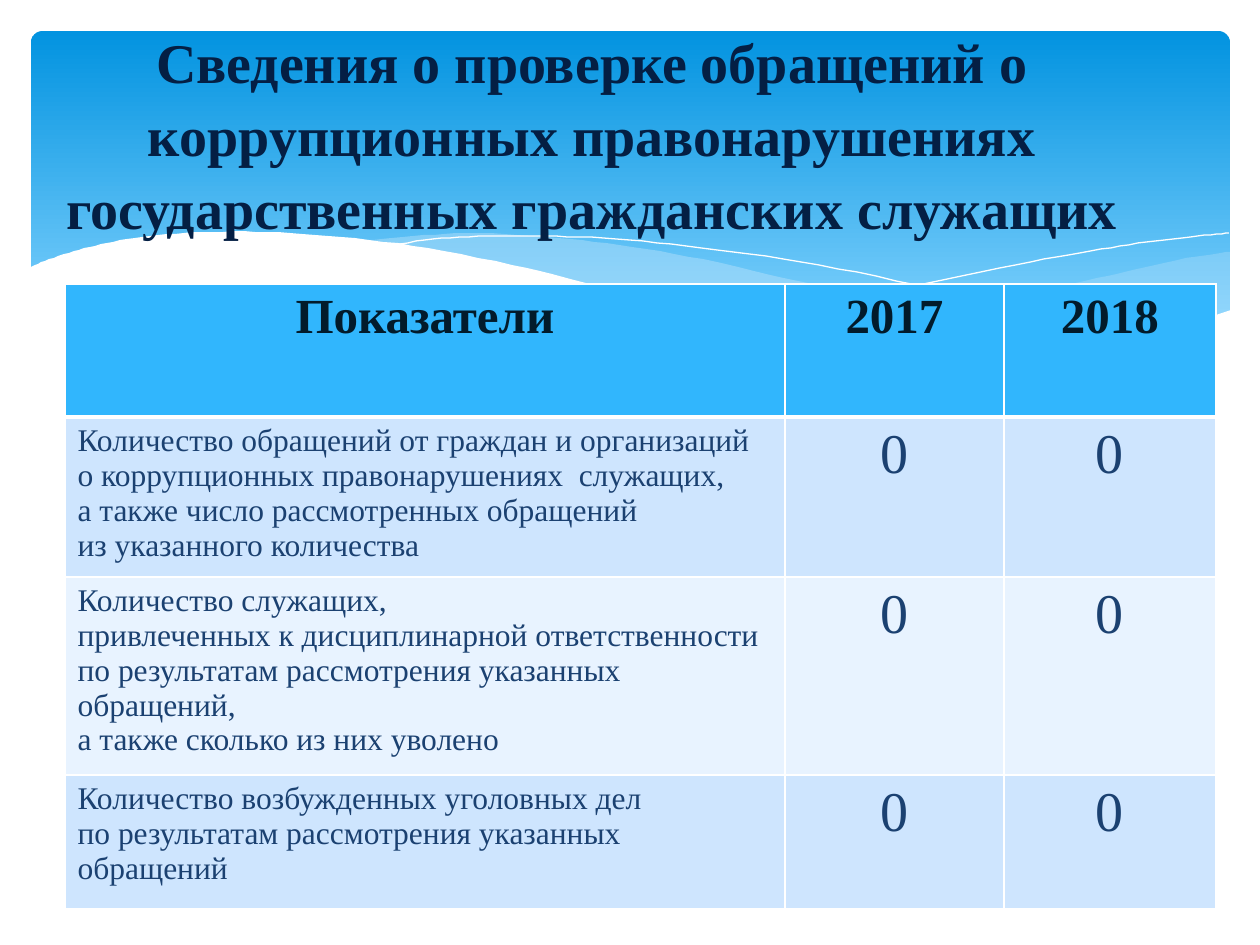
from dataclasses import dataclass
from lxml.etree import SubElement
from pptx import Presentation
from pptx.dml.color import RGBColor
from pptx.enum.shapes import MSO_SHAPE
from pptx.enum.text import MSO_ANCHOR, MSO_AUTO_SIZE, PP_ALIGN
from pptx.oxml.ns import qn
from pptx.util import Emu, Pt


@dataclass(frozen=True)
class Theme:
    font: str = "Times New Roman"
    title: str = "041F44"
    head: str = "021B2B"
    body: str = "1B4171"
    white: str = "FFFFFF"
    wave: str = "C6E7FC"
    sky: tuple = ("0293E0", "83D3FE")
    header: str = "31B6FD"
    bands: tuple = ("CEE5FE", "E8F3FF")
    big: int = 32
    mid: int = 28
    small: int = 18


theme = Theme()
PX = 7257  # EMU in one px, 126 px to the inch
STEPS = 6


def smooth(knots):
    """Return points on a Catmull-Rom curve through the knots."""
    ends = [knots[0], *knots, knots[-1]]
    points = [knots[0]]
    for a, b, c, d in zip(ends, ends[1:], ends[2:], ends[3:]):
        for step in range(1, STEPS + 1):
            t = step / STEPS
            points.append(tuple(
                (2 * q + (r - p) * t + (2 * p - 5 * q + 4 * r - s) * t ** 2
                 + (3 * q - p - 3 * r + s) * t ** 3) / 2
                for p, q, r, s in zip(a, b, c, d)))
    return points


def write(para, text, size, color, bold=False):
    run = para.add_run()
    run.text = text
    run.font.name = theme.font
    run.font.size = Pt(size)
    run.font.bold = bold
    run.font.color.rgb = RGBColor.from_string(color)


deck = Presentation()
deck.slide_width, deck.slide_height = Emu(1260 * PX), Emu(945 * PX)
slide = deck.slides.add_slide(deck.slide_layouts[5])
shapes = slide.shapes

# Blue panel
panel = shapes.add_shape(MSO_SHAPE.ROUNDED_RECTANGLE,
                         *(Emu(n * PX) for n in (31, 31, 1199, 340)))
panel.adjustments[0] = 0.034
panel.shadow.inherit = False
panel.line.fill.background()
panel.fill.gradient()
panel.fill.gradient_angle = 270
for stop, color, place in zip(panel.fill.gradient_stops, theme.sky, (0, 0.9)):
    stop.color.rgb = RGBColor.from_string(color)
    stop.position = place

# Waves: smooth curves, straight corners, fill, opacity in percent
waves = [
    ([[(1230, 252), (1194, 257), (1142, 268), (1085, 281), (982, 305), (833, 334)],
      [(833, 334), (923, 345), (1026, 350), (1120, 343), (1178, 332), (1230, 311)]],
     [], theme.wave, 29),
    ([[(1125, 344), (1019, 328), (890, 302), (793, 280), (717, 262), (632, 247),
       (557, 238), (479, 233), (413, 236), (360, 241)],
      [(360, 241), (431, 251), (509, 266), (566, 280), (668, 302), (757, 321),
       (838, 335), (921, 345), (1017, 350), (1125, 344)]],
     [], theme.wave, 40),
    ([[(389, 246), (433, 239), (488, 236), (545, 236), (616, 239), (701, 248),
       (801, 262), (916, 285), (1047, 316), (1143, 343)]], [], None, 100),
    ([[(772, 324), (823, 310), (907, 288), (1016, 265), (1091, 251), (1147, 242),
       (1198, 236), (1229, 233)]], [], None, 100),
    ([[(1231, 310), (1172, 330), (1103, 344), (1020, 349), (915, 343), (816, 330),
       (699, 309), (599, 286), (527, 268), (428, 248), (341, 237), (266, 232),
       (203, 232), (150, 236), (107, 243), (74, 251), (45, 261), (29, 268)]],
     [(29, 415), (1231, 415)], theme.white, 100),
]
for curves, corners, color, alpha in waves:
    points = [point for curve in curves for point in smooth(curve)] + corners
    path = shapes.build_freeform(*points[0], scale=PX)
    path.add_line_segments(points[1:], close=color is not None)
    wave = path.convert_to_shape()
    wave.shadow.inherit = False
    if color is None:
        wave.fill.background()
        wave.line.color.rgb = RGBColor.from_string(theme.white)
        wave.line.width = Pt(0)
        continue
    wave.line.fill.background()
    wave.fill.solid()
    wave.fill.fore_color.rgb = RGBColor.from_string(color)
    if alpha < 100:
        tint = wave.element.spPr.find(qn("a:solidFill"))[0]
        SubElement(tint, qn("a:alpha"), val=str(alpha * 1000))

# Table: each cell is a list of paragraphs
rows = [
    [["Показатели"], ["2017"], ["2018"]],
    [["Количество обращений от граждан и организаций о коррупционных "
      "правонарушениях  служащих,",
      "а также число рассмотренных обращений",
      "из указанного количества"], ["0"], ["0"]],
    [["Количество служащих,",
      "привлеченных к дисциплинарной ответственности по результатам "
      "рассмотрения указанных обращений,",
      "а также сколько из них уволено"], ["0"], ["0"]],
    [["Количество возбужденных уголовных дел",
      "по результатам рассмотрения указанных обращений"], ["0"], ["0"]],
]
widths, heights = (720, 219, 212), (133, 160, 198, 134)
table = shapes.add_table(len(rows), len(widths), *(
    Emu(n * PX) for n in (65, 284, sum(widths), sum(heights)))).table
for col, width in zip(table.columns, widths):
    col.width = Emu(width * PX)
for y, (row, height) in enumerate(zip(rows, heights)):
    table.rows[y].height = Emu(height * PX)
    for x, lines in enumerate(row):
        cell = table.cell(y, x)
        props = cell._tc.get_or_add_tcPr()
        for side in "LRTB":
            thick = (y, side) in ((0, "B"), (1, "T"))
            edge = SubElement(props, qn("a:ln" + side),
                              w=str(Pt(3 if thick else 1)))
            SubElement(SubElement(edge, qn("a:solidFill")),
                       qn("a:srgbClr"), val=theme.white)
        cell.fill.solid()
        back = theme.bands[(y - 1) % 2] if y else theme.header
        cell.fill.fore_color.rgb = RGBColor.from_string(back)
        for i, line in enumerate(lines):
            frame = cell.text_frame
            para = frame.add_paragraph() if i else frame.paragraphs[0]
            para.alignment = PP_ALIGN.CENTER if x or not y else PP_ALIGN.LEFT
            if y:
                write(para, line, theme.big if x else theme.small, theme.body)
            else:
                write(para, line, theme.mid, theme.head, True)

# Title, in front of the panel
title = shapes.title
title.element.getparent().append(title.element)
title.left, title.top, title.width, title.height = (
    Emu(n * PX) for n in (25, 45, 1134, 173))
frame = title.text_frame
frame.auto_size = MSO_AUTO_SIZE.NONE
frame.word_wrap = True
frame.vertical_anchor = MSO_ANCHOR.MIDDLE
para = frame.paragraphs[0]
para.alignment = PP_ALIGN.CENTER
para.line_spacing = 1.08
write(para, "Сведения о проверке обращений о коррупционных правонарушениях "
      "государственных гражданских служащих", theme.big, theme.title, True)

deck.save("out.pptx")
